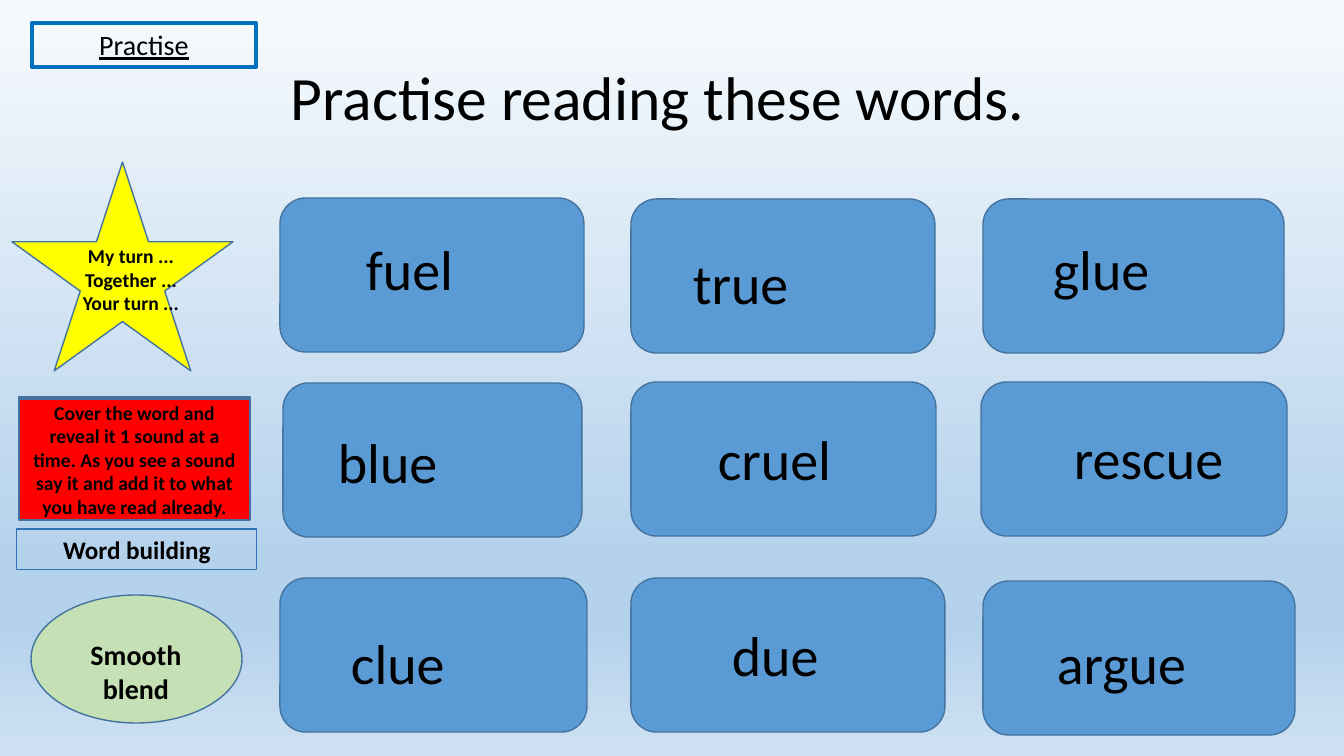
from lxml import etree
from pptx import Presentation
from pptx.dml.color import RGBColor
from pptx.enum.shapes import MSO_SHAPE as SHAPE
from pptx.enum.text import MSO_ANCHOR as ANCHOR, PP_ALIGN as ALIGN
from pptx.oxml.ns import qn
from pptx.util import Emu, Pt

COLORS = {
    "text": "000000", "card": "5B9BD5", "edge": "43739E",
    "star": "FFFF00", "cover": "FF0000", "blend": "C5E0B4",
    "building_edge": "2E75B6", "practise_edge": "0070C0",
}
SKY = [(0, "F7FAFD"), (74, "B5D2EC"), (83, "B5D2EC"), (100, "CEE1F2")]

TITLE = "Practise reading these words."
CARD_HEIGHT = 154
WORD_SIZE = (230, 78)
# word, card (left, top, width), word box (left, top)
CARDS = [
    ("fuel", (280, 198, 304), (356, 230)),
    ("true", (631, 199, 304), (683, 244)),
    ("glue", (983, 199, 301), (1043, 230)),
    ("blue", (283, 383, 299), (328, 423)),
    ("cruel", (631, 382, 305), (708, 420)),
    ("rescue", (981, 382, 306), (1064, 419)),
    ("clue", (280, 578, 307), (341, 624)),
    ("due", (631, 578, 314), (722, 616)),
    ("argue", (983, 581, 312), (1047, 624)),
]
# preset, box, fill, edge, edge width
PROMPTS = [
    (SHAPE.RECTANGLE, (19, 397, 231, 121), "cover", "edge", 1),
    (SHAPE.RECTANGLE, (19, 399, 231, 121), "cover", "edge", 1),
    (SHAPE.STAR_5_POINT, (12, 162, 221, 209), "star", "edge", 1),
    (SHAPE.OVAL, (31, 595, 211, 128), "blend", "edge", 1),
    (SHAPE.RECTANGLE, (17, 529, 240, 41), None, "building_edge", 0.75),
    (SHAPE.RECTANGLE, (32, 23, 224, 44), None, "practise_edge", 3),
]
# box, lines, size, font options
LABELS = [
    ((72, 239, 118, 122), ["My turn ...", "Together ...", "Your turn ..."],
     14, {"bold": True}),
    ((19, 399, 231, 121),
     ["Cover the word and reveal it 1 sound at a time. As you see a sound "
      "say it and add it to what you have read already."],
     14, {"bold": True, "anchor": ANCHOR.MIDDLE}),
    ((56, 633, 160, 84), ["Smooth blend"], 20, {"bold": True}),
    ((17, 529, 240, 41), ["Word building"], 18, {"bold": True}),
    ((32, 23, 224, 44), ["Practise"], 20, {"underline": True}),
]


def px(length):
    return Emu(round(length * 914400 / 100.8))


def rgb(name):
    return RGBColor.from_string(COLORS[name])


def paint_sky(slide):
    """Fill the background with a vertical gradient of the SKY stops."""
    slide.background.fill.gradient()
    gradient = next(slide.element.iter(qn("a:gradFill")))
    stops = gradient.find(qn("a:gsLst"))
    for stop in list(stops):
        stops.remove(stop)
    for percent, color in SKY:
        stop = etree.SubElement(stops, qn("a:gs"), pos=str(percent * 1000))
        etree.SubElement(stop, qn("a:srgbClr"), val=color)
    gradient.find(qn("a:lin")).set("ang", "5400000")


def add_panel(slide, preset, box, fill, edge, edge_width):
    panel = slide.shapes.add_shape(preset, *map(px, box))
    panel.shadow.inherit = False
    if fill:
        panel.fill.solid()
        panel.fill.fore_color.rgb = rgb(fill)
    else:
        panel.fill.background()
    panel.line.color.rgb = rgb(edge)
    panel.line.width = Pt(edge_width)


def add_label(slide, box, lines, size, align=ALIGN.CENTER, anchor=ANCHOR.TOP,
              bold=False, underline=False, spacing=1.0):
    frame = slide.shapes.add_textbox(*map(px, box)).text_frame
    frame.word_wrap = True
    frame.vertical_anchor = anchor
    for i, line in enumerate(lines):
        paragraph = frame.add_paragraph() if i else frame.paragraphs[0]
        paragraph.alignment = align
        paragraph.line_spacing = spacing
        run = paragraph.add_run()
        run.text = line
        run.font.name = "Calibri"
        run.font.size = Pt(size)
        run.font.bold = bold
        run.font.underline = underline
        run.font.color.rgb = rgb("text")


def main():
    deck = Presentation()
    deck.slide_width, deck.slide_height = px(1344), px(756)
    slide = deck.slides.add_slide(deck.slide_layouts[6])
    paint_sky(slide)
    add_label(slide, (280, 38, 756, 125), [TITLE], 44,
              anchor=ANCHOR.MIDDLE, spacing=0.9)
    for word, card, corner in CARDS:
        add_panel(slide, SHAPE.ROUNDED_RECTANGLE, (*card, CARD_HEIGHT),
                  "card", "edge", 1)
        add_label(slide, (*corner, *WORD_SIZE), [word], 40, align=ALIGN.LEFT)
    for prompt in PROMPTS:
        add_panel(slide, *prompt)
    for box, lines, size, options in LABELS:
        add_label(slide, box, lines, size, **options)
    deck.save("out.pptx")


if __name__ == "__main__":
    main()
